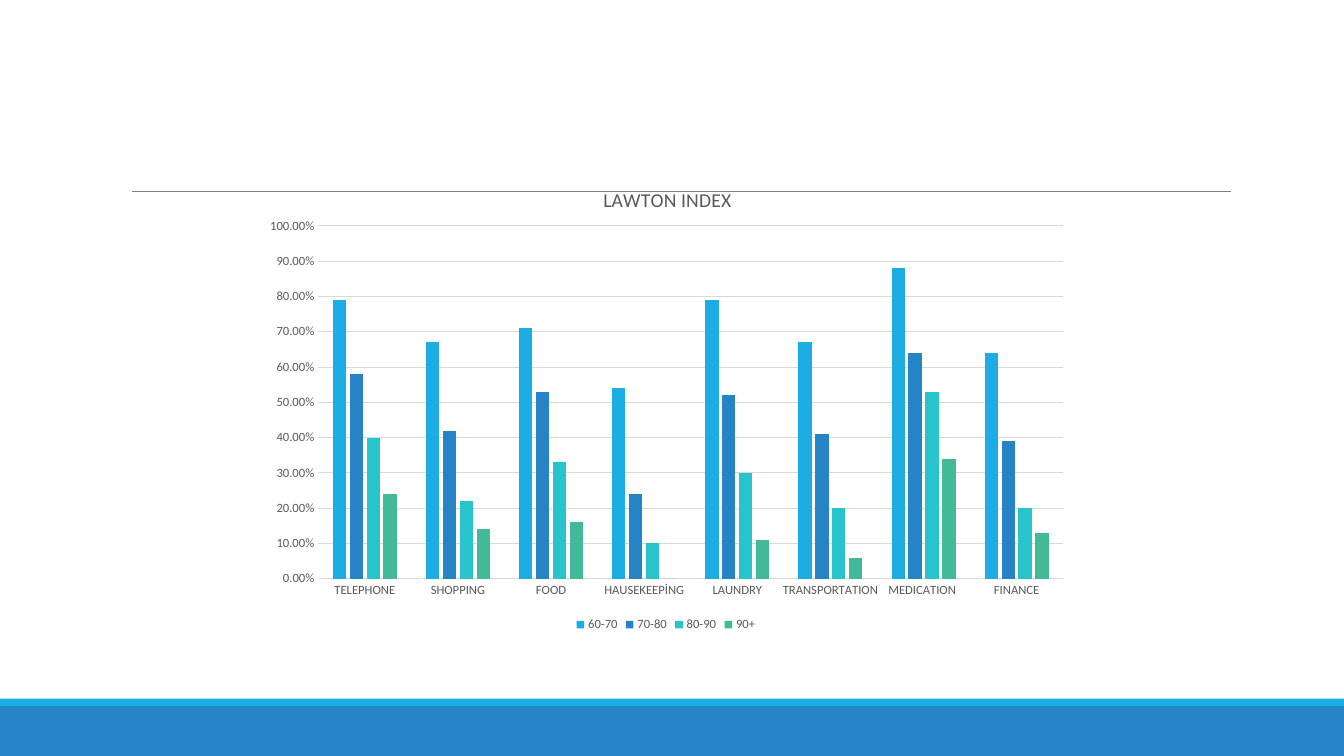
from lxml import etree
from pptx import Presentation
from pptx import util as u
from pptx.chart.data import CategoryChartData
from pptx.dml.color import RGBColor
from pptx.enum import chart as ch, shapes
from pptx.oxml.ns import qn

WIDTH, HEIGHT = u.Inches(13.33), u.Inches(7.5)
FONT = "Calibri"
COLORS = {
    "sky": "1CADE4", "blue": "2683C6", "aqua": "28C4CC", "green": "42BA97",
    "rule": "808080", "grid": "D9D9D9", "label": "595959", "text": "000000",
}
ACTIVITIES = ["TELEPHONE", "SHOPPING", "FOOD", "HAUSEKEEPİNG", "LAUNDRY",
              "TRANSPORTATION", "MEDICATION ", "FINANCE"]
AGE_GROUPS = [
    ("60-70", "sky", [0.79, 0.67, 0.71, 0.54, 0.79, 0.67, 0.88, 0.64]),
    ("70-80", "blue", [0.58, 0.42, 0.53, 0.24, 0.52, 0.41, 0.64, 0.39]),
    ("80-90", "aqua", [0.4, 0.22, 0.33, 0.1, 0.3, 0.2, 0.53, 0.2]),
    ("90+", "green", [0.24, 0.14, 0.16, 0, 0.11, 0.06, 0.34, 0.13]),
]


def rgb(name):
    """Return the named colour."""
    return RGBColor.from_string(COLORS[name])


def style_font(font, size, color):
    """Set typeface, size and colour."""
    font.name, font.size, font.bold = FONT, u.Pt(size), False
    font.color.rgb = rgb(color)


def style_line(line, color, width):
    """Set line colour and width in points."""
    line.color.rgb = rgb(color)
    line.width = u.Pt(width)


def add_band(slide, top, height, color):
    """Add a full-width band; top and height are shares of the slide."""
    band = slide.shapes.add_shape(
        shapes.MSO_SHAPE.RECTANGLE, 0, int(HEIGHT * top), WIDTH, int(HEIGHT * height))
    band.shadow.inherit = False
    band.fill.solid()
    band.fill.fore_color.rgb = rgb(color)
    band.line.fill.background()


def add_rule(slide, left, right, y):
    """Add a thin horizontal rule between two points in inches."""
    rule = slide.shapes.add_connector(
        shapes.MSO_CONNECTOR.STRAIGHT, *map(u.Inches, (left, y, right, y)))
    style_line(rule.line, "rule", 0.5)
    etree.SubElement(rule._element.spPr, qn("a:effectLst"))


def place(part, index, **shares):
    """Fix a chart part's position as shares of the chart frame."""
    for old in part.findall(qn("c:layout")):
        part.remove(old)
    layout = etree.Element(qn("c:layout"))
    manual = etree.SubElement(layout, qn("c:manualLayout"))
    settings = {"xMode": "edge", "yMode": "edge", **shares}
    if "w" in shares:
        settings = {"layoutTarget": "inner", **settings}
    for key, value in settings.items():
        etree.SubElement(manual, qn(f"c:{key}")).set("val", str(value))
    part.insert(index, layout)


def style_axes(chart):
    """Style both axes and the gridlines."""
    for axis in (chart.category_axis, chart.value_axis):
        axis.major_tick_mark = axis.minor_tick_mark = ch.XL_TICK_MARK.NONE
        style_font(axis.tick_labels.font, 9, "label")
    style_line(chart.category_axis.format.line, "grid", 0.75)
    percent = chart.value_axis
    percent.minimum_scale, percent.maximum_scale, percent.major_unit = 0, 1, 0.1
    percent.format.line.fill.background()
    percent.tick_labels.number_format = "0.00%"
    percent.tick_labels.number_format_is_linked = False
    style_line(percent.major_gridlines.format.line, "grid", 0.75)


def add_title(chart, wording):
    """Add the chart title."""
    heading = chart.chart_title.text_frame.paragraphs[0].add_run()
    heading.text = wording
    style_font(heading.font, 14, "label")
    place(chart.chart_title._element, 1, x=0.42, y=0.05)


def add_index_chart(slide):
    """Add the clustered columns of index shares by activity and age."""
    data = CategoryChartData(number_format="0.00%")
    data.categories = ACTIVITIES
    for ages, _, shares in AGE_GROUPS:
        data.add_series(ages, shares)
    chart = slide.shapes.add_chart(
        ch.XL_CHART_TYPE.COLUMN_CLUSTERED,
        *map(u.Inches, (2.5, 1.58, 8.21, 4.73)), data).chart
    style_font(chart.font, 10, "text")
    add_title(chart, "LAWTON INDEX")
    style_axes(chart)
    columns = chart.plots[0]
    columns.gap_width, columns.overlap, columns.vary_by_categories = 219, -27, False
    for series, (_, color, _) in zip(columns.series, AGE_GROUPS):
        series.format.fill.solid()
        series.format.fill.fore_color.rgb = rgb(color)
    chart.has_legend = True
    chart.legend.position = ch.XL_LEGEND_POSITION.BOTTOM
    chart.legend.include_in_layout = False
    style_font(chart.legend.font, 9, "label")
    place(chart._chartSpace.chart.plotArea, 0, x=0.08, y=0.14, w=0.9, h=0.74)


def main():
    """Build the slide and save it."""
    deck = Presentation()
    deck.slide_width, deck.slide_height = WIDTH, HEIGHT
    slide = deck.slides.add_slide(deck.slide_layouts[6])
    add_band(slide, 14 / 15, 1 / 15, "blue")
    add_band(slide, 0.924, 0.01, "sky")
    add_rule(slide, 1.31, 12.21, 1.9)
    add_index_chart(slide)
    deck.save("out.pptx")


if __name__ == "__main__":
    main()
